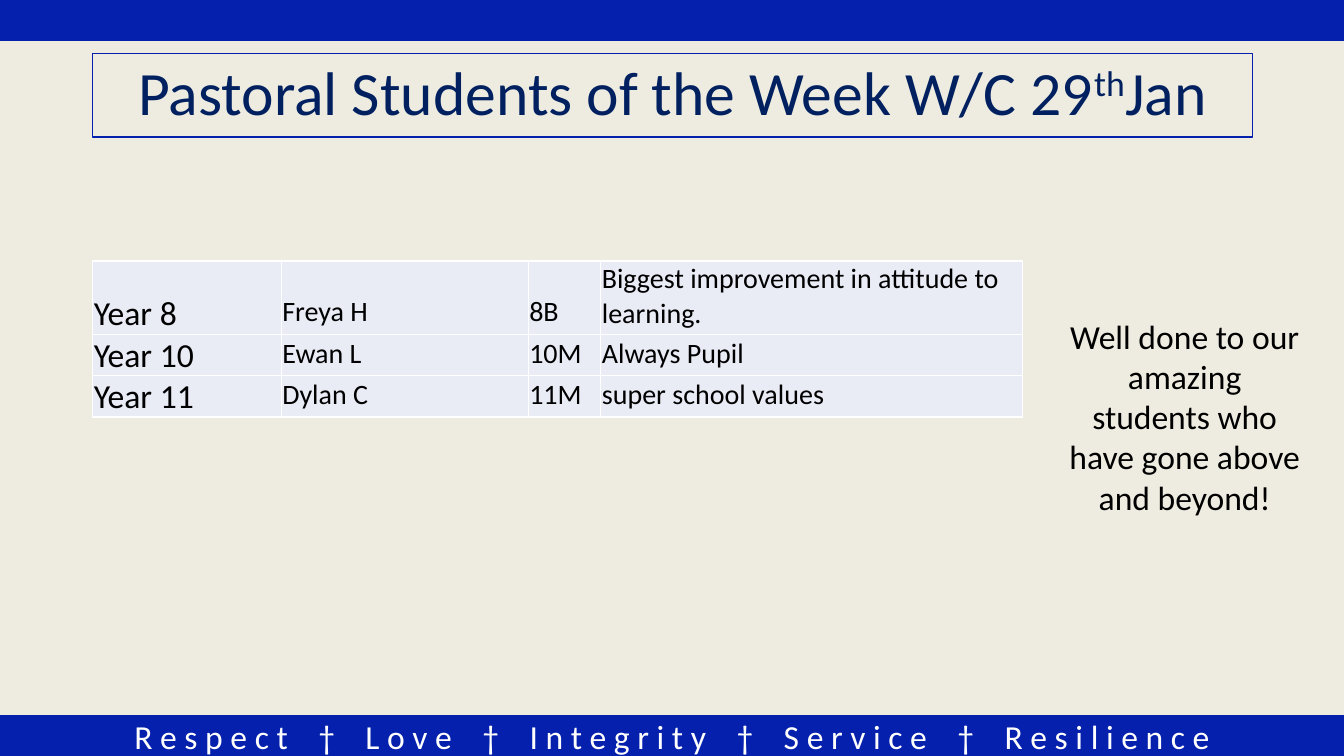
"""Build the slide that celebrates the pastoral students of the week."""
from dataclasses import dataclass

from lxml.etree import SubElement
from pptx import Presentation
from pptx.dml.color import RGBColor
from pptx.enum.shapes import MSO_SHAPE
from pptx.enum.text import MSO_ANCHOR, PP_ALIGN
from pptx.oxml.ns import qn
from pptx.slide import Slide
from pptx.table import _Cell
from pptx.text.text import TextFrame
from pptx.util import Inches, Pt

BLUE, NAVY, WHITE, BLACK = "0420AC", "002060", "FFFFFF", "000000"
CREAM, PALE = "EEECE1", "E9EBF5"
VALUES = ["Respect", "Love", "Integrity", "Service", "Resilience"]
COLUMN_WIDTHS = [1.87, 2.45, 0.72, 4.18]
ROW_HEIGHT = 0.38
WIDE_GAP = {"spc": 1630}


@dataclass
class Student:
    year: str
    name: str
    form: str
    reason: str


@dataclass
class Box:
    left: float
    top: float
    width: float
    height: float

    def lengths(self) -> list[Inches]:
        return [Inches(side) for side in (self.left, self.top, self.width, self.height)]


STUDENTS = [
    Student("Year 8", "Freya H", "8B", "Biggest improvement in attitude to learning."),
    Student("Year 10", "Ewan L", "10M", "Always Pupil"),
    Student("Year 11", "Dylan C", "11M", "super school values"),
]


def colour(code: str) -> RGBColor:
    """Turn a hex string into a colour."""
    return RGBColor.from_string(code)


def write(frame: TextFrame, *pieces: str | tuple[str, dict[str, int]], size: float = 24,
          ink: str = BLACK, align: PP_ALIGN = PP_ALIGN.CENTER,
          anchor: MSO_ANCHOR = MSO_ANCHOR.MIDDLE, line_spacing: float = 1.0) -> None:
    """Write one paragraph, with optional run properties for each piece."""
    frame.word_wrap = True
    frame.vertical_anchor = anchor
    paragraph = frame.paragraphs[0]
    paragraph.alignment = align
    paragraph.line_spacing = line_spacing
    for piece in pieces:
        words, properties = (piece, {}) if isinstance(piece, str) else piece
        run = paragraph.add_run()
        run.text = words
        run.font.name = "Calibri"
        run.font.size = Pt(size)
        run.font.color.rgb = colour(ink)
        for key, value in properties.items():
            run._r.get_or_add_rPr().set(key, str(value))


def add_panel(slide: Slide, box: Box, fill: str | None = BLUE,
              line_width: float = 1) -> TextFrame:
    """Add a blue-edged rectangle and return its text frame."""
    panel = slide.shapes.add_shape(MSO_SHAPE.RECTANGLE, *box.lengths())
    panel.shadow.inherit = False
    if fill:
        panel.fill.solid()
        panel.fill.fore_color.rgb = colour(fill)
    else:
        panel.fill.background()
    panel.line.color.rgb = colour(BLUE)
    panel.line.width = Pt(line_width)
    return panel.text_frame


def values_line() -> list[str | tuple[str, dict[str, int]]]:
    """Space out the letters of the school values, with a dagger between words."""
    pieces = []
    for value in VALUES:
        if pieces:
            pieces += [(" ", WIDE_GAP), "†", (" ", WIDE_GAP)]
        pieces.append(" ".join(value))
    return pieces


def style_cell(cell: _Cell, bottom: float) -> None:
    """Give a cell its white borders, pale fill and tight margins."""
    properties = cell._tc.get_or_add_tcPr()
    for side in ("lnL", "lnR", "lnT", "lnB"):
        border = SubElement(properties, qn(f"a:{side}"), w=str(Pt(1)))
        fill = SubElement(border, qn("a:solidFill"))
        SubElement(fill, qn("a:srgbClr"), val=WHITE)
    cell.fill.solid()
    cell.fill.fore_color.rgb = colour(PALE)
    cell.margin_left = cell.margin_right = cell.margin_top = Inches(0.01)
    cell.margin_bottom = Inches(bottom)
    cell.vertical_anchor = MSO_ANCHOR.BOTTOM


def add_students(slide: Slide) -> None:
    """Add the table of students."""
    box = Box(0.92, 2.59, sum(COLUMN_WIDTHS), ROW_HEIGHT * len(STUDENTS))
    table = slide.shapes.add_table(
        len(STUDENTS), len(COLUMN_WIDTHS), *box.lengths()).table
    table.first_row = table.horz_banding = False
    for column, width in zip(table.columns, COLUMN_WIDTHS):
        column.width = Inches(width)
    for row, student in zip(table.rows, STUDENTS):
        row.height = Inches(ROW_HEIGHT)
        entries = (student.year, student.name, student.form, student.reason)
        for index, (cell, entry) in enumerate(zip(row.cells, entries)):
            write(cell.text_frame, entry, size=20 if index else 24,
                  align=PP_ALIGN.LEFT, anchor=MSO_ANCHOR.BOTTOM)
            style_cell(cell, bottom=0.05 if index else 0)


def main() -> None:
    """Build and save the slide."""
    deck = Presentation()
    deck.slide_width, deck.slide_height = Inches(13.33), Inches(7.5)
    slide = deck.slides.add_slide(deck.slide_layouts[6])
    slide.background.fill.solid()
    slide.background.fill.fore_color.rgb = colour(CREAM)

    footer = add_panel(slide, Box(0, 7.1, 13.33, 0.4))
    write(footer, *values_line(), ink=WHITE)
    add_panel(slide, Box(0, 0, 13.33, 0.4))

    title = add_panel(slide, Box(0.92, 0.53, 11.5, 0.83), fill=None, line_width=0.75)
    write(title, "Pastoral Students of the Week W/C 29", ("th", {"baseline": 30000}),
          "Jan", size=44, ink=NAVY, line_spacing=0.9)

    praise = slide.shapes.add_textbox(*Box(10.48, 3.08, 2.54, 2.12).lengths())
    write(praise.text_frame,
          "Well done to our amazing students who have gone above and beyond!",
          anchor=MSO_ANCHOR.TOP)
    add_students(slide)
    deck.save("out.pptx")


if __name__ == "__main__":
    main()
